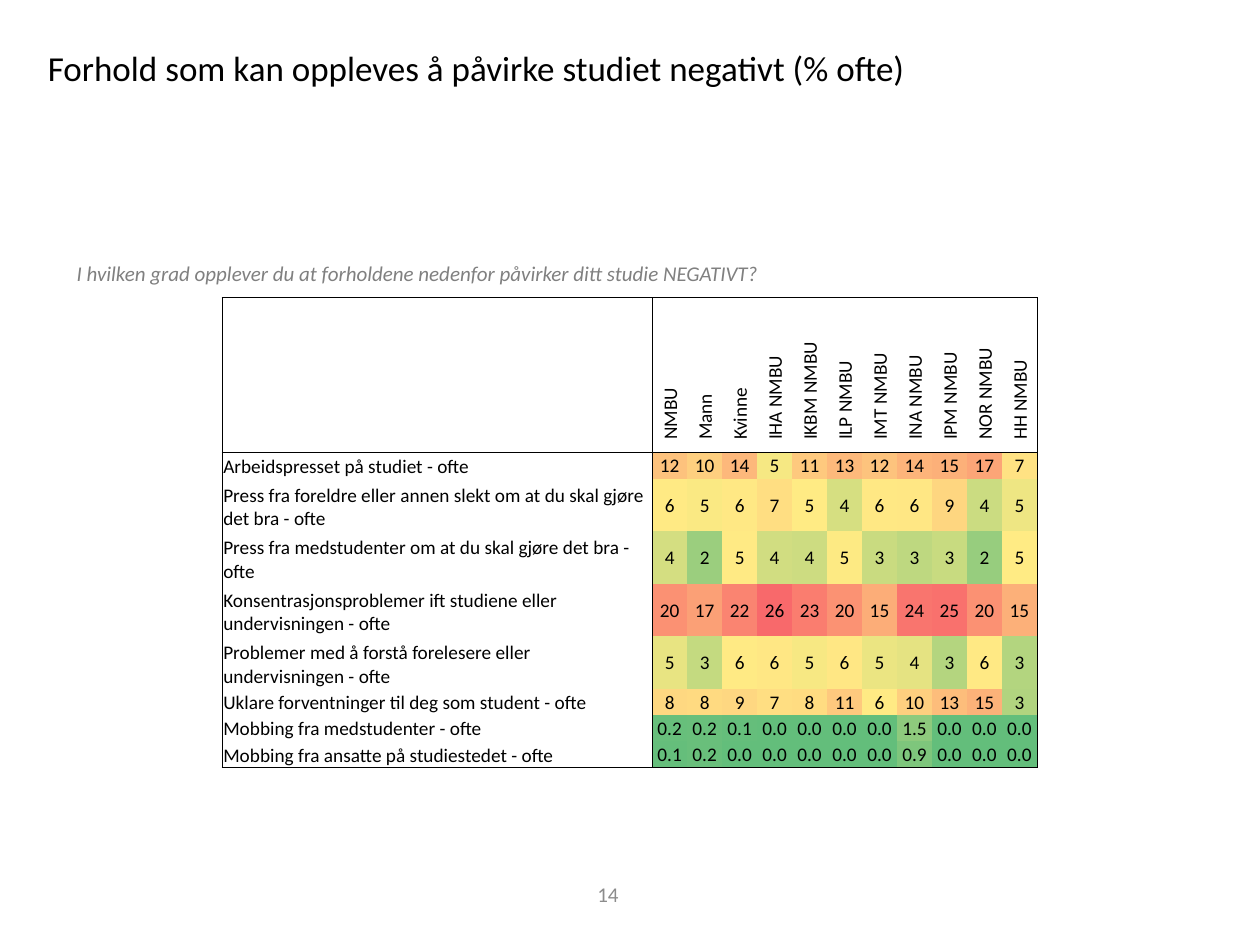
from dataclasses import dataclass

from lxml.etree import SubElement
from pptx import Presentation
from pptx.dml.color import RGBColor
from pptx.enum.text import MSO_ANCHOR, MSO_AUTO_SIZE, PP_ALIGN
from pptx.oxml.ns import qn
from pptx.util import Pt


@dataclass(frozen=True)
class Theme:
    font: str = "Calibri"
    text: str = "000000"
    question: str = "808080"
    number: str = "8C8C8C"
    title_size: float = 20
    note_size: float = 12
    table_size: float = 11
    border: float = 0.5


@dataclass(frozen=True)
class Label:
    text: str
    box: tuple[float, float, float, float]
    size: float
    color: str
    italic: bool = False
    wrap: bool = True
    grow: bool = True
    align: PP_ALIGN = PP_ALIGN.LEFT
    anchor: MSO_ANCHOR = MSO_ANCHOR.TOP


@dataclass(frozen=True)
class HeatRow:
    name: str
    height: float
    values: str
    fills: str


T = Theme()
SINGLE, DOUBLE, HEADER = 15, 30, 88.6
NAME_WIDTH, VALUE_WIDTH = 245.8, 20
TABLE_LEFT, TABLE_TOP = 126.9, 170

LABELS = [
    Label("14", (263.5, 496.8, 167.8, 28.8), T.note_size, T.number, grow=False,
          align=PP_ALIGN.CENTER, anchor=MSO_ANCHOR.MIDDLE),
    Label("Forhold som kan oppleves å påvirke studiet negativt (% ofte)",
          (20.2, 23, 509.8, 31.5), T.title_size, T.text, wrap=False),
    Label("I hvilken grad opplever du at forholdene nedenfor påvirker ditt studie NEGATIVT?",
          (36.7, 145.4, 447.8, 21.8), T.note_size, T.question, italic=True),
]

COLUMNS = ["NMBU", "Mann", "Kvinne", "IHA NMBU", "IKBM NMBU", "ILP NMBU", "IMT NMBU",
           "INA NMBU", "IPM NMBU", "NOR NMBU", "HH NMBU"]

ROWS = [
    HeatRow("Arbeidspresset på studiet - ofte", SINGLE,
            "12 10 14 5 11 13 12 14 15 17 7",
            "FDC27D FECF7F FDB87B F6E883 FEC97E FDB97B FDC37D FDB47A FCB079 FCA577 FFE283"),
    HeatRow("Press fra foreldre eller annen slekt om at du skal gjøre det bra - ofte", DOUBLE,
            "6 5 6 7 5 4 6 6 9 4 5",
            "FFEA84 FAE983 FFE884 FFDE82 FFEB84 D6DF81 FFE884 FFE784 FED680 CBDC81 EEE683"),
    HeatRow("Press fra medstudenter om at du skal gjøre det bra - ofte", DOUBLE,
            "4 2 5 4 4 5 3 3 3 2 5",
            "D4DE81 9BCE7E FFEA84 D1DD81 CDDC81 FDEA83 C9DB80 BED880 C8DB80 97CD7E FFEB84"),
    HeatRow("Konsentrasjonsproblemer ift studiene eller undervisningen - ofte", DOUBLE,
            "20 17 22 26 23 20 15 24 25 20 15",
            "FB9173 FBA076 FA8471 F8696B FA7D6F FB9273 FCAD78 F9756E F9716D FB9173 FCB079"),
    HeatRow("Problemer med å forstå forelesere eller undervisningen - ofte", DOUBLE,
            "5 3 6 6 5 6 5 4 3 6 3",
            "E8E482 C4DA80 FFEA84 FFE784 F7E883 FFE784 EBE582 E5E382 B4D57F FFE984 B3D57F"),
    HeatRow("Uklare forventninger til deg som student - ofte", SINGLE,
            "8 8 9 7 8 11 6 10 13 15 3",
            "FED881 FFDA81 FED781 FFDE82 FFDC81 FEC97E FFEA84 FECF7F FDBD7B FCB279 B1D47F"),
    HeatRow("Mobbing fra medstudenter - ofte", SINGLE,
            "0.2 0.2 0.1 0.0 0.0 0.0 0.0 1.5 0.0 0.0 0.0",
            "67BF7B 69BF7B 65BE7B 63BE7B 63BE7B 63BE7B 63BE7B 8ECA7D 63BE7B 63BE7B 63BE7B"),
    HeatRow("Mobbing fra ansatte på studiestedet - ofte", SINGLE,
            "0.1 0.2 0.0 0.0 0.0 0.0 0.0 0.9 0.0 0.0 0.0",
            "65BE7B 69BF7B 63BE7B 63BE7B 63BE7B 63BE7B 63BE7B 7EC67C 63BE7B 63BE7B 63BE7B"),
]


def add_run(p, text: str, size: float, color: str, italic: bool = False) -> None:
    r = p.add_run()
    r.text = text
    r.font.name, r.font.size, r.font.italic = T.font, Pt(size), italic
    r.font.color.rgb = RGBColor.from_string(color)


def add_label(s, label: Label) -> None:
    sp = s.shapes.add_textbox(*map(Pt, label.box))
    tf = sp.text_frame
    tf.word_wrap = label.wrap
    tf.auto_size = MSO_AUTO_SIZE.SHAPE_TO_FIT_TEXT if label.grow else MSO_AUTO_SIZE.NONE
    tf.vertical_anchor = label.anchor
    p = tf.paragraphs[0]
    p.alignment = label.align
    add_run(p, label.text, label.size, label.color, label.italic)


def set_borders(cell, sides: str) -> None:
    tc_pr = cell._tc.get_or_add_tcPr()
    for side in "LRTB":
        ln = SubElement(tc_pr, qn(f"a:ln{side}"), w=str(Pt(T.border)))
        if side in sides:
            fill = SubElement(ln, qn("a:solidFill"))
            SubElement(fill, qn("a:srgbClr"), val=T.text)
        else:
            SubElement(ln, qn("a:noFill"))


def border_sides(row: int, col: int) -> str:
    """Frame the table, and rule off the header row and the name column."""
    rules = {"L": col <= 1, "R": col in (0, len(COLUMNS)),
             "T": row <= 1, "B": row in (0, len(ROWS))}
    return "".join(side for side, drawn in rules.items() if drawn)


def fill_cell(cell, text: str, anchor: MSO_ANCHOR, align: PP_ALIGN = PP_ALIGN.LEFT,
              fill: str = "", tight: bool = True) -> None:
    cell.vertical_anchor = anchor
    if tight:
        cell.margin_left = cell.margin_right = cell.margin_top = Pt(0.7)
        cell.margin_bottom = 0
    if fill:
        cell.fill.solid()
        cell.fill.fore_color.rgb = RGBColor.from_string(fill)
    else:
        cell.fill.background()
    if text:
        p = cell.text_frame.paragraphs[0]
        p.alignment = align
        add_run(p, text, T.table_size, T.text)


def add_heat_table(s) -> None:
    heights = [HEADER] + [row.height for row in ROWS]
    widths = [NAME_WIDTH] + [VALUE_WIDTH] * len(COLUMNS)
    table = s.shapes.add_table(len(heights), len(widths), Pt(TABLE_LEFT), Pt(TABLE_TOP),
                               Pt(sum(widths)), Pt(sum(heights))).table
    table.first_row = table.horz_banding = False
    for column, width in zip(table.columns, widths):
        column.width = Pt(width)
    for i, height in enumerate(heights):
        table.rows[i].height = Pt(height)
        for j in range(len(widths)):
            set_borders(table.cell(i, j), border_sides(i, j))

    # Header row with upright column names
    fill_cell(table.cell(0, 0), "", MSO_ANCHOR.TOP, tight=False)
    for j, name in enumerate(COLUMNS, 1):
        cell = table.cell(0, j)
        cell._tc.get_or_add_tcPr().set("vert", "vert270")
        fill_cell(cell, name, MSO_ANCHOR.MIDDLE, tight=False)

    # Statements and their coloured values
    for i, row in enumerate(ROWS, 1):
        fill_cell(table.cell(i, 0), row.name, MSO_ANCHOR.BOTTOM)
        for j, (value, fill) in enumerate(zip(row.values.split(), row.fills.split()), 1):
            fill_cell(table.cell(i, j), value, MSO_ANCHOR.MIDDLE, PP_ALIGN.CENTER, fill)


def main() -> None:
    prs = Presentation()
    prs.slide_width, prs.slide_height = Pt(720), Pt(540)
    s = prs.slides.add_slide(prs.slide_layouts[6])
    for label in LABELS:
        add_label(s, label)
    add_heat_table(s)
    prs.save("out.pptx")


if __name__ == "__main__":
    main()
